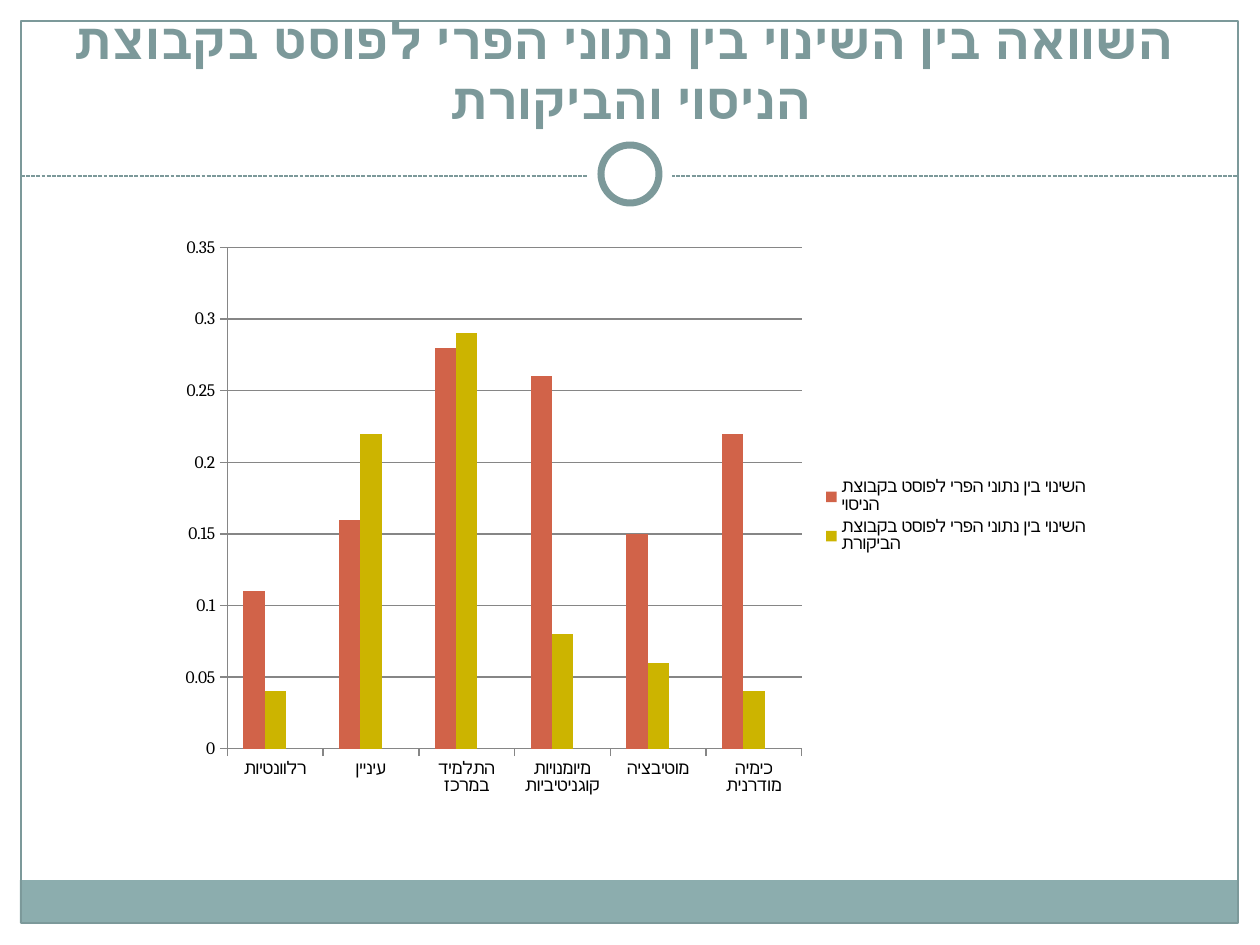
from lxml import etree
from pptx import Presentation
from pptx.chart.data import CategoryChartData as Data
from pptx.dml.color import RGBColor
from pptx.enum.chart import XL_CHART_TYPE as Kind, XL_LEGEND_POSITION as Side, XL_TICK_MARK as Tick
from pptx.enum.dml import MSO_LINE as Dash
from pptx.enum.shapes import MSO_CONNECTOR as Link, MSO_SHAPE as Form
from pptx.enum.text import MSO_ANCHOR as Anchor, MSO_AUTO_SIZE as Fit, PP_ALIGN as Align
from pptx.oxml import parse_xml
from pptx.oxml.ns import nsdecls, qn
from pptx.util import Pt

SCALE = 914400 / 126  # EMU in one px
TEAL, PALE, WHITE, GREY = "7C999A", "8CADAE", "FFFFFF", "868686"


def px(*nums):
    return [round(n * SCALE) for n in nums]


def color(text):
    return RGBColor.from_string(text)


deck = Presentation()
deck.slide_width, deck.slide_height = px(1260, 945)
slide = deck.slides.add_slide(deck.slide_layouts[5])
shapes = slide.shapes

# Dashed rule under the title
rule = shapes.add_connector(Link.STRAIGHT, *px(21, 176, 1239, 176))
rule.line.color.rgb = color(TEAL)
rule.line.width = Pt(0.75)
rule.line.dash_style = Dash.SQUARE_DOT
etree.SubElement(rule._element.spPr, qn("a:effectLst"))

# Bottom band, frame and ring: form, box, fill, line width
parts = [
    (Form.RECTANGLE, (20, 880, 1217, 43), PALE, 0),
    (Form.RECTANGLE, (21, 21, 1217, 902), None, 0.75),
    (Form.OVAL, (588, 132, 84, 84), WHITE, 0),
    (Form.OVAL, (601, 145, 58, 58), WHITE, 4),
]
for form, box, fill, width in parts:
    part = shapes.add_shape(form, *px(*box))
    part.shadow.inherit = False
    if fill:
        part.fill.solid()
        part.fill.fore_color.rgb = color(fill)
    else:
        part.fill.background()
    if width:
        part.line.color.rgb = color(TEAL)
        part.line.width = Pt(width)
    else:
        part.line.fill.background()

# Title
title = shapes.title
title.left, title.top, title.width, title.height = px(42, 32, 1176, 104)
frame = title.text_frame
frame.text = " השוואה בין השינוי בין נתוני הפרי לפוסט בקבוצת הניסוי והביקורת"
frame.auto_size = Fit.NONE
frame.word_wrap = True
frame.vertical_anchor = Anchor.BOTTOM
para = frame.paragraphs[0]
para.alignment = Align.CENTER
para._p.get_or_add_pPr().set("rtl", "1")
font = para.runs[0].font
for name, value in {"name": "Cambria", "size": Pt(28.8), "bold": True}.items():
    setattr(font, name, value)
font.color.rgb = color(TEAL)

# Chart data; the empty third series keeps its slot in each group
data = Data()
data.categories = ["רלוונטיות", "עיניין", "התלמיד במרכז",
                   "מיומנויות קוגניטיביות", "מוטיבציה", "כימיה מודרנית"]
rows = [
    ("השינוי בין נתוני הפרי לפוסט בקבוצת הניסוי",
     [0.11, 0.16, 0.28, 0.26, 0.15, 0.22], "D16349"),
    ("השינוי בין נתוני הפרי לפוסט בקבוצת הביקורת",
     [0.04, 0.22, 0.29, 0.08, 0.06, 0.04], "CCB400"),
    ("Series 3", [None] * 6, PALE),
]
for name, nums, _ in rows:
    data.add_series(name, nums)

# Column chart
chart = shapes.add_chart(Kind.COLUMN_CLUSTERED, *px(167, 226, 935, 581), data).chart
chart.has_title = False
chart.font.name = "Cambria"
chart.font.size = Pt(10)
chart.font.color.rgb = color("000000")
plot = chart.plots[0]
plot.vary_by_categories = False
plot.gap_width = 150
for series, row in zip(plot.series, rows):
    series.format.fill.solid()
    series.format.fill.fore_color.rgb = color(row[2])

# Axes and grid
cats, vals = chart.category_axis, chart.value_axis
vals.minimum_scale, vals.maximum_scale, vals.major_unit = 0, 0.35, 0.05
vals.has_major_gridlines = True
for axis in (cats, vals):
    axis.major_tick_mark = Tick.OUTSIDE
for item in (cats, vals, vals.major_gridlines):
    item.format.line.color.rgb = color(GREY)
    item.format.line.width = Pt(0.75)

# Legend without the empty series
chart.has_legend = True
legend = chart.legend
legend.position = Side.RIGHT
legend.include_in_layout = False
entry = parse_xml(f'<c:legendEntry {nsdecls("c")}><c:idx val="2"/><c:delete val="1"/></c:legendEntry>')
legend._element.find(qn("c:legendPos")).addnext(entry)

deck.save("out.pptx")
